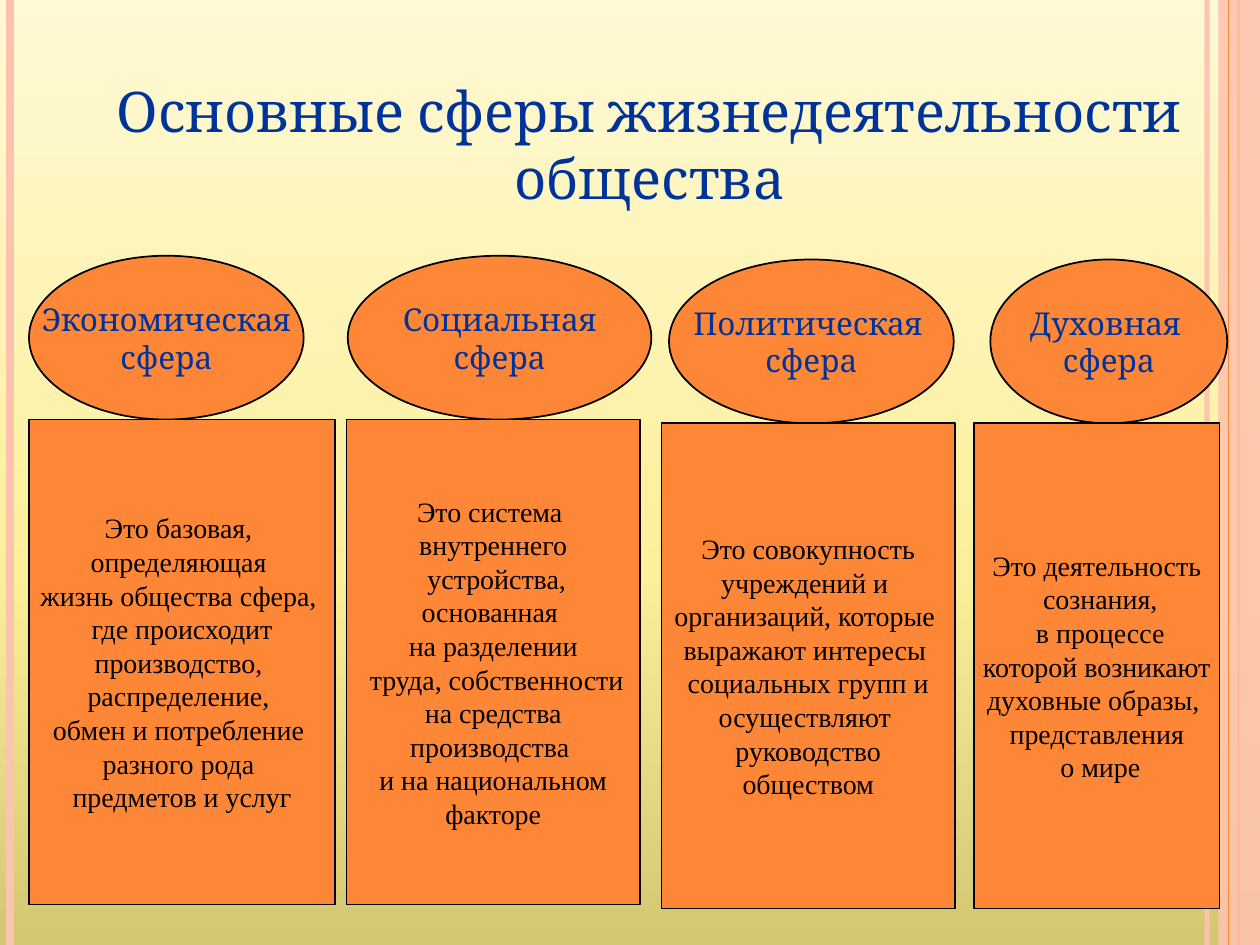
from lxml import etree
from copy import deepcopy
from pptx import Presentation
from pptx.dml.color import RGBColor
from pptx.enum.shapes import MSO_CONNECTOR, MSO_SHAPE
from pptx.enum.text import MSO_ANCHOR, MSO_AUTO_SIZE, PP_ALIGN
from pptx.oxml.ns import qn
from pptx.util import Inches, Pt

STRAIGHT = MSO_CONNECTOR.STRAIGHT
OVAL, RECT = MSO_SHAPE.OVAL, MSO_SHAPE.RECTANGLE
CENTER, MIDDLE = PP_ALIGN.CENTER, MSO_ANCHOR.MIDDLE
NO_FIT = MSO_AUTO_SIZE.NONE

COLORS = {"orange": "FE8637", "peach": "FEC3AE", "navy": "003399", "black": "000000"}
SKY = [(0, "D3C772"), (0.4, "FCEF9B"), (1, "FFF9D5")]
WIDTH, HEIGHT = 10, 7.5
TITLE = "Основные сферы жизнедеятельности общества"
STRIPES = [
    (9.58, "peach", 3, 93),
    (0.08, "peach", 4.5, 100),
    (9.83, "orange", 1.5, 100),
    (9.75, "orange", 0.75, 100),
]
BAND_LEFT, BAND_ALPHA = 9.67, 87
OVAL_HEIGHT, BOX_HEIGHT = 1.3, 3.85
SPHERES = [
    {"top": 2.03, "oval": (0.23, 2.18), "box": (0.23, 2.43),
     "name": ["Экономическая", "сфера"],
     "meaning": ["Это базовая, ", "определяющая ", "жизнь общества сфера, ",
                 "где происходит", "производство, ", "распределение, ",
                 "обмен и потребление ", "разного рода ", "предметов и услуг"]},
    {"top": 2.03, "oval": (2.76, 2.41), "box": (2.75, 2.33),
     "name": ["Социальная", "сфера"],
     "meaning": ["Это система ", "внутреннего", " устройства,", "основанная ",
                 "на разделении", " труда, собственности", " на средства ",
                 "производства ", "и на национальном", "факторе"]},
    {"top": 2.06, "oval": (5.31, 2.26), "box": (5.25, 2.33),
     "name": ["Политическая ", "сфера"],
     "meaning": ["Это совокупность", "учреждений и ", "организаций, которые ",
                 "выражают интересы ", "социальных групп и", "осуществляют ",
                 "руководство", "обществом"]},
    {"top": 2.06, "oval": (7.86, 1.88), "box": (7.73, 1.95),
     "name": ["Духовная ", "сфера"],
     "meaning": ["Это деятельность", " сознания,", " в процессе",
                 " которой возникают ", "духовные образы, ", "представления",
                 " о мире"]},
]


def rgb(name):
    return RGBColor.from_string(COLORS[name])


def set_alpha(element, percent):
    color = element.find(".//" + qn("a:srgbClr"))
    etree.SubElement(color, qn("a:alpha")).set("val", str(percent * 1000))


def write(shape, lines, font, size, color, wrap=False):
    frame = shape.text_frame
    frame.auto_size = NO_FIT
    frame.word_wrap = wrap
    frame.vertical_anchor = MIDDLE
    for index, line in enumerate(lines):
        paragraph = frame.add_paragraph() if index else frame.paragraphs[0]
        paragraph.alignment = CENTER
        run = paragraph.add_run()
        run.text = line
        run.font.name = font
        run.font.size = Pt(size)
        run.font.color.rgb = rgb(color)


def add_block(slide, kind, left, top, width, height, fill, outline=None):
    block = slide.shapes.add_shape(kind, *map(Inches, (left, top, width, height)))
    block.shadow.inherit = False
    block.fill.solid()
    block.fill.fore_color.rgb = rgb(fill)
    if outline:
        block.line.color.rgb = rgb(outline)
        block.line.width = Pt(1)
    else:
        block.line.fill.background()
    return block


def add_stripe(slide, x, color, width, alpha):
    stripe = slide.shapes.add_connector(
        STRAIGHT, Inches(x), 0, Inches(x), Inches(HEIGHT))
    stripe.line.color.rgb = rgb(color)
    stripe.line.width = Pt(width)
    properties = stripe._element.spPr
    etree.SubElement(properties, qn("a:effectLst"))
    if alpha < 100:
        set_alpha(properties, alpha)


def paint_background(slide):
    fill = slide.background.fill
    fill.gradient()
    fill.gradient_angle = 90
    stop_list = slide._element.find(".//" + qn("a:gsLst"))
    stop_list.append(deepcopy(stop_list[-1]))
    for stop, (position, color) in zip(fill.gradient_stops, SKY):
        stop.position = position
        stop.color.rgb = RGBColor.from_string(color)


def main():
    deck = Presentation()
    deck.slide_width, deck.slide_height = Inches(WIDTH), Inches(HEIGHT)
    slide = deck.slides.add_slide(deck.slide_layouts[5])
    paint_background(slide)

    for stripe in STRIPES[:3]:
        add_stripe(slide, *stripe)
    band = add_block(slide, RECT, BAND_LEFT, 0, WIDTH - BAND_LEFT, HEIGHT, "peach")
    set_alpha(band._element.spPr, BAND_ALPHA)
    add_stripe(slide, *STRIPES[3])

    title = slide.shapes.title
    title.left, title.top, title.width, title.height = map(
        Inches, (0.78, 0.39, 8.75, 1.5))
    write(title, [TITLE], font="Cambria", size=32, color="navy", wrap=True)

    for sphere in SPHERES:
        left, width = sphere["oval"]
        oval = add_block(slide, OVAL, left, sphere["top"], width, OVAL_HEIGHT,
                         "orange", outline="black")
        write(oval, sphere["name"], font="Cambria", size=18, color="navy")
    for sphere in SPHERES:
        left, width = sphere["box"]
        box = add_block(slide, RECT, left, sphere["top"] + OVAL_HEIGHT, width,
                        BOX_HEIGHT, "orange", outline="black")
        write(box, sphere["meaning"], font="Times New Roman", size=16, color="black")

    deck.save("out.pptx")


if __name__ == "__main__":
    main()
